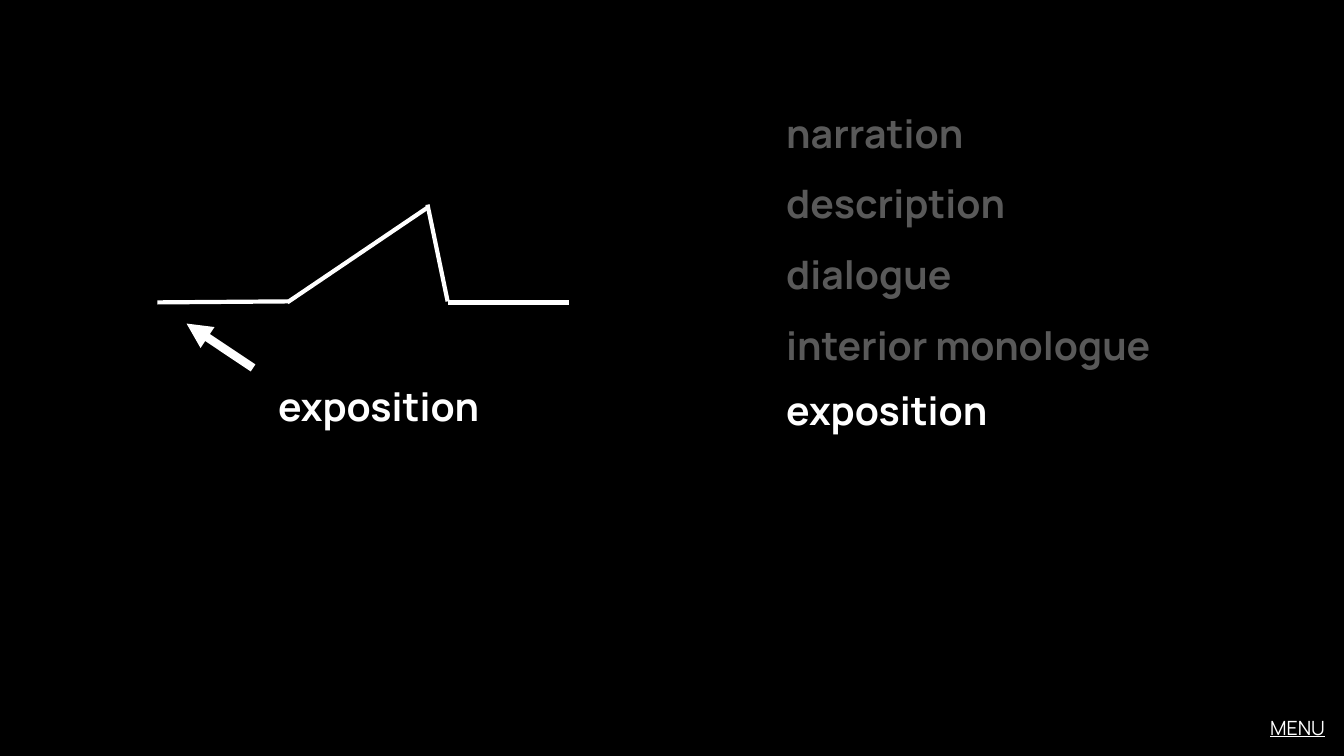
"""Build a slide that sets a story arc beside the modes of fiction writing."""
import dataclasses

import lxml.etree
import pptx
import pptx.dml.color
import pptx.enum.shapes
import pptx.enum.text
import pptx.oxml.ns
import pptx.util

Inches = pptx.util.Inches
Pt = pptx.util.Pt
Color = pptx.dml.color.RGBColor
Align = pptx.enum.text.PP_ALIGN


@dataclasses.dataclass(frozen=True)
class Theme:
    font: str = "Manrope"
    black: Color = Color(0, 0, 0)
    white: Color = Color(255, 255, 255)
    gray: Color = Color(0x59, 0x59, 0x59)
    large: int = 28
    small: int = 14
    thin: int = 3
    thick: int = 6


class Page:
    def __init__(self, slide, theme):
        self.slide = slide
        self.theme = theme
        fill = slide.background.fill
        fill.solid()
        fill.fore_color.rgb = theme.black

    def text(self, lines, box, color, size, bold=True, under=False,
             align=Align.LEFT, space=None):
        shape = self.slide.shapes.add_textbox(*map(Inches, box))
        frame = shape.text_frame
        frame.word_wrap = True
        frame.auto_size = pptx.enum.text.MSO_AUTO_SIZE.SHAPE_TO_FIT_TEXT
        frame.text = "\n".join(lines)
        for para in frame.paragraphs:
            para.alignment = align
            para.line_spacing = space
            for run in para.runs:
                font = run.font
                font.name = self.theme.font
                font.size = Pt(size)
                font.bold = bold
                font.underline = under
                font.color.rgb = color

    def group(self):
        return self.slide.shapes.add_group_shape()

    def line(self, group, start, end, width, arrow=False):
        link = group.shapes.add_connector(
            pptx.enum.shapes.MSO_CONNECTOR.STRAIGHT,
            *map(Inches, (*start, *end)))
        link.line.color.rgb = self.theme.white
        link.line.width = Pt(width)
        qn = pptx.oxml.ns.qn
        if arrow:
            outline = link.line._get_or_add_ln()
            lxml.etree.SubElement(outline, qn("a:tailEnd"), type="triangle")
        lxml.etree.SubElement(link._element.spPr, qn("a:effectLst"))


def main():
    deck = pptx.Presentation()
    deck.slide_width = Inches(13.33)
    deck.slide_height = Inches(7.5)
    theme = Theme()
    page = Page(deck.slides.add_slide(deck.slide_layouts[6]), theme)

    page.text(["MENU"], (12.32, 7.05, 0.92, 0.34), theme.white, theme.small,
              bold=False, under=True, align=Align.RIGHT)
    page.text(["exposition"], (2.66, 3.74, 2.41, 0.57), theme.white,
              theme.large)
    modes = ["narration", "description", "dialogue", "interior monologue"]
    page.text(modes, (7.7, 0.8, 4.46, 2.85), theme.gray, theme.large,
              space=1.5)

    plot = page.group()
    arc = [
        ((1.56, 3), (2.86, 2.99)),
        ((2.85, 3), (4.24, 2.06)),
        ((4.24, 2.03), (4.44, 2.99)),
        ((4.44, 3), (5.64, 3)),
    ]
    for start, end in arc:
        page.line(plot, start, end, theme.thin)
    page.line(plot, (2.51, 3.65), (1.85, 3.21), theme.thick, arrow=True)

    page.text(["exposition"], (7.7, 3.63, 4.46, 0.67), theme.white,
              theme.large, space=Pt(45))
    deck.save("out.pptx")


if __name__ == "__main__":
    main()
